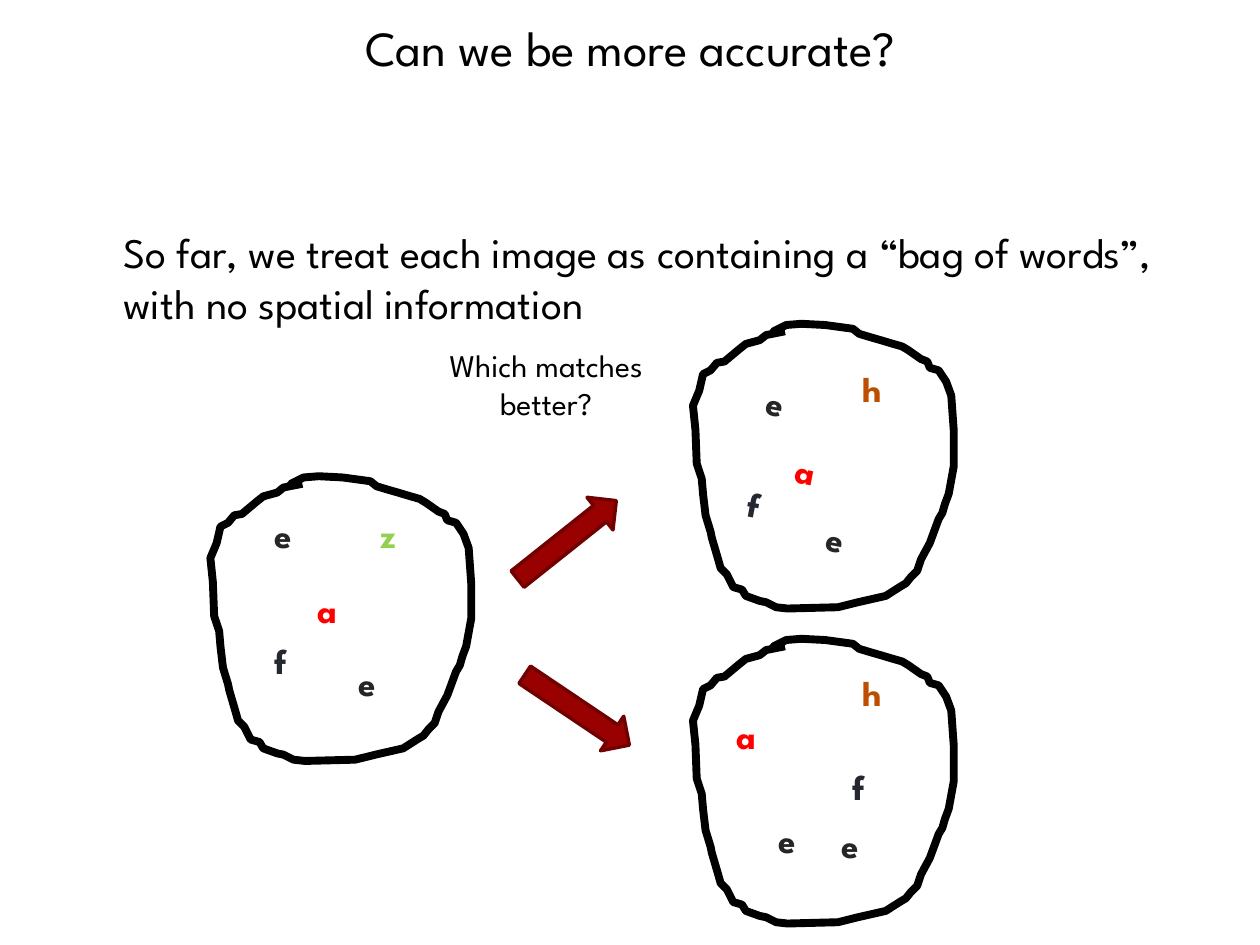
from pptx import Presentation
from pptx.dml.color import RGBColor
from pptx.enum import shapes, text
from pptx.util import Inches, Pt

FONT = "League Spartan"
BLACK = RGBColor(0x00, 0x00, 0x00)
ARROW_FILL = RGBColor(0x99, 0x00, 0x00)
ARROW_LINE = RGBColor(0x71, 0x00, 0x00)
LETTER_COLORS = {
    "a": RGBColor(0xFF, 0x00, 0x00),
    "e": RGBColor(0x26, 0x26, 0x26),
    "f": RGBColor(0x25, 0x27, 0x31),
    "h": RGBColor(0xBF, 0x4D, 0x00),
    "z": RGBColor(0x92, 0xD0, 0x50),
}
LETTER_WIDTHS = {"a": 0.39, "e": 0.38, "f": 0.29, "h": 0.37, "z": 0.33}

# Hand-drawn bag outline, in inches from the bag's top left corner
BAG_OUTLINE = [
    (0.73, 0.10), (0.58, 0.13), (0.53, 0.17), (0.42, 0.20), (0.37, 0.24),
    (0.25, 0.34), (0.19, 0.35), (0.14, 0.41), (0.08, 0.44), (0.05, 0.57),
    (0.00, 0.69), (0.02, 0.88), (0.03, 1.15), (0.07, 1.27), (0.08, 1.39),
    (0.10, 1.56), (0.14, 1.69), (0.15, 1.74), (0.20, 1.91), (0.22, 1.98),
    (0.27, 2.03), (0.32, 2.13), (0.39, 2.15), (0.42, 2.20), (0.53, 2.24),
    (0.58, 2.25), (0.66, 2.29), (0.75, 2.30), (1.15, 2.29), (1.31, 2.25),
    (1.53, 2.20), (1.64, 2.13), (1.69, 2.10), (1.73, 2.05), (1.78, 2.00),
    (1.81, 1.91), (1.88, 1.78), (1.95, 1.59), (1.98, 1.54), (2.00, 1.47),
    (2.03, 1.39), (2.07, 1.17), (2.07, 0.89), (2.05, 0.61), (2.01, 0.50),
    (1.95, 0.41), (1.88, 0.39), (1.86, 0.34), (1.81, 0.32), (1.71, 0.25),
    (1.66, 0.22), (1.59, 0.20), (1.49, 0.17), (1.42, 0.15), (1.32, 0.12),
    (1.27, 0.08), (1.05, 0.05), (0.86, 0.04), (0.74, 0.05), (0.64, 0.10),
    (0.63, 0.13),
]

# Each bag: its corner, then its letters as (letter, left, top, rotation)
BAGS = [
    ((1.67, 3.74), [("a", 2.42, 4.62, 0), ("f", 2.08, 5.03, 0), ("z", 2.92, 4.03, 0),
                    ("e", 2.75, 5.20, 0), ("e", 2.08, 4.03, 0)]),
    ((5.50, 5.03), [("a", 5.75, 5.62, 0), ("f", 6.67, 6.03, 0), ("e", 6.58, 6.49, 0),
                    ("e", 6.08, 6.45, 0), ("h", 6.75, 5.28, 0)]),
    ((5.50, 2.53), [("a", 6.22, 3.52, 10.9), ("f", 5.84, 3.78, 10.9), ("e", 6.46, 4.06, 10.9),
                    ("e", 5.99, 2.98, 10.9), ("h", 6.75, 2.87, 0)]),
]


def write(box, words, align=text.PP_ALIGN.LEFT, **style):
    para = box.text_frame.paragraphs[0]
    para.alignment = align
    span = para.add_run()
    span.text = words
    span.font.color.rgb = style.pop("color", BLACK)
    for name, value in {"name": FONT, **style}.items():
        setattr(span.font, name, value)
    return para


def add_text(left, top, width, height, words, wrap=True, **style):
    box = page.shapes.add_textbox(Inches(left), Inches(top), Inches(width), Inches(height))
    box.text_frame.word_wrap = wrap
    box.text_frame.auto_size = text.MSO_AUTO_SIZE.SHAPE_TO_FIT_TEXT
    write(box, words, **style)
    return box


deck = Presentation()
deck.slide_width, deck.slide_height = Inches(10), Inches(7.5)
page = deck.slides.add_slide(deck.slide_layouts[5])

# Title
title = page.shapes.title
title.left, title.top, title.width, title.height = Inches(0), Inches(0), Inches(10), Inches(0.75)
title.text_frame.vertical_anchor = text.MSO_ANCHOR.MIDDLE
write(title, "Can we be more accurate?", align=text.PP_ALIGN.CENTER, size=Pt(28))

# Statement, with its text set in from the box edge
statement = add_text(
    0.5, 1.75, 9, 0.9,
    "So far, we treat each image as containing a “bag of words”, with no spatial information",
    size=Pt(24))
statement.text_frame.margin_left = Inches(0.48)

# Bags and their letters
for (left, top), letters in BAGS:
    points = [(Inches(left + x), Inches(top + y)) for x, y in BAG_OUTLINE]
    builder = page.shapes.build_freeform(*points[0])
    builder.add_line_segments(points[1:], close=False)
    bag = builder.convert_to_shape()
    bag.shadow.inherit = False
    bag.fill.background()
    bag.line.color.rgb = BLACK
    bag.line.width = Pt(4.5)
    for letter, x, y, rotation in letters:
        box = add_text(x, y, LETTER_WIDTHS[letter], 0.44, letter, wrap=False,
                       size=Pt(20), bold=True, color=LETTER_COLORS[letter])
        box.rotation = rotation

# Arrows to the two candidates
for left, top, rotation in [(4, 4.12, 321.5), (4.08, 5.47, 33.9)]:
    arrow = page.shapes.add_shape(shapes.MSO_SHAPE.RIGHT_ARROW, Inches(left), Inches(top),
                                  Inches(1), Inches(0.33))
    arrow.rotation = rotation
    arrow.shadow.inherit = False
    arrow.fill.solid()
    arrow.fill.fore_color.rgb = ARROW_FILL
    arrow.line.color.rgb = ARROW_LINE
    arrow.line.width = Pt(2)

# Question
add_text(3.17, 2.7, 2.33, 0.71, "Which matches better?",
         align=text.PP_ALIGN.CENTER, size=Pt(18))

deck.save("out.pptx")
